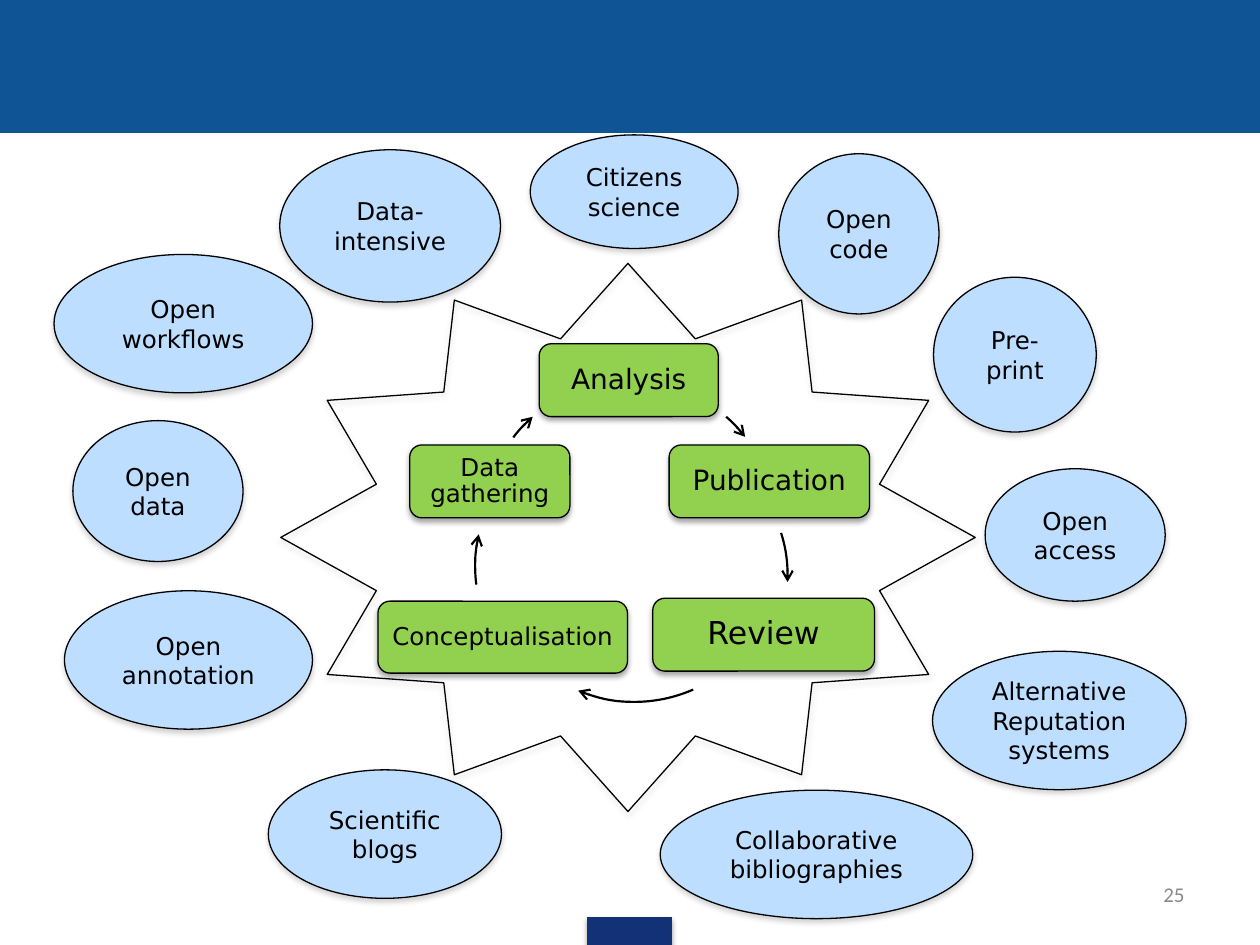
from dataclasses import dataclass

from lxml.etree import SubElement
from pptx import Presentation
from pptx.dml.color import RGBColor
from pptx.enum.shapes import MSO_SHAPE
from pptx.enum.text import MSO_ANCHOR, PP_ALIGN
from pptx.oxml.ns import qn
from pptx.util import Cm, Pt


@dataclass(frozen=True)
class Theme:
    header: str = "0F5494"
    footer: str = "133176"
    step: str = "92D050"
    practice: str = "BDDEFF"
    ink: str = "000000"
    muted: str = "898989"
    dark_shadow: str = "000000"
    soft_shadow: str = "808080"
    font: str = "DejaVu Sans"
    number_font: str = "Calibri"
    small: int = 12
    normal: int = 14
    large: int = 16
    largest: int = 18
    outline: float = 0.75
    arrow: float = 1.25


THEME = Theme()

STEPS = [
    ("Analysis", (10.87, 6.93, 3.61, 1.47), THEME.large),
    ("Publication", (13.49, 8.97, 4.04, 1.47), THEME.large),
    ("Review", (13.16, 12.06, 4.47, 1.47), THEME.largest),
    ("Conceptualisation", (7.62, 12.12, 5.03, 1.45), THEME.normal),
    ("Data gathering", (8.26, 8.97, 3.23, 1.47), THEME.normal),
]

ARC_SIZE = 5.92
ARCS = [
    (9.73, 7.67, 311.2, 322),
    (9.96, 8.66, 342.8, 2.2),
    (9.83, 8.23, 66.4, 112.5),
    (9.58, 8.46, 172.9, 192.6),
    (9.73, 7.67, 217.7, 228.8),
]

PRACTICES = [
    ("Open access", (19.86, 9.45, 3.63, 2.67)),
    ("Scientific blogs", (5.41, 15.52, 4.7, 2.59)),
    ("Collaborative bibliographies", (13.31, 15.93, 6.3, 2.59)),
    ("Alternative Reputation systems", (18.8, 13.13, 5.11, 2.79)),
    ("Citizens science", (10.69, 2.72, 4.19, 2.29)),
    ("Open code", (15.7, 3.1, 3.23, 3.23)),
    ("Open workflows", (1.09, 5.13, 5.21, 2.79)),
    ("Open annotation", (1.3, 11.91, 5, 2.79)),
    ("Open data", (1.47, 8.48, 3.43, 2.84)),
    ("Pre-print", (18.82, 5.59, 3.28, 3.12)),
    ("Data-intensive", (5.64, 3.02, 4.45, 3.07)),
]


def add_shadow(shape, color):
    effects = shape._element.spPr.find(qn("a:effectLst"))
    shadow = SubElement(effects, qn("a:outerShdw"), blurRad=str(Pt(3.1)),
                        dist=str(Pt(1.8)), dir="5400000", rotWithShape="0")
    tint = SubElement(shadow, qn("a:srgbClr"), val=color)
    SubElement(tint, qn("a:alpha"), val="35000")


def add_figure(slide, kind, box, fill=None, line=THEME.ink,
               width=THEME.outline, shadow=None):
    shape = slide.shapes.add_shape(kind, *map(Cm, box))
    shape.shadow.inherit = False
    if fill:
        shape.fill.solid()
        shape.fill.fore_color.rgb = RGBColor.from_string(fill)
    else:
        shape.fill.background()
    shape.line.color.rgb = RGBColor.from_string(line)
    shape.line.width = Pt(width)
    if shadow:
        add_shadow(shape, shadow)
    return shape


def write_text(shape, text, size=THEME.normal, font=THEME.font, color=THEME.ink,
               align=PP_ALIGN.CENTER, anchor=MSO_ANCHOR.MIDDLE, spacing=1.0,
               insets=(0.25, 0.13)):
    frame = shape.text_frame
    frame.word_wrap = True
    frame.vertical_anchor = anchor
    frame.margin_left = frame.margin_right = Cm(insets[0])
    frame.margin_top = frame.margin_bottom = Cm(insets[1])
    paragraph = frame.paragraphs[0]
    paragraph.alignment = align
    paragraph.line_spacing = spacing
    run = paragraph.add_run()
    run.text = text
    run.font.size = Pt(size)
    run.font.name = font
    run.font.color.rgb = RGBColor.from_string(color)


def add_step(slide, text, box, size):
    shape = add_figure(slide, MSO_SHAPE.ROUNDED_RECTANGLE, box, THEME.step,
                       shadow=THEME.dark_shadow)
    write_text(shape, text, size=size, spacing=0.9, insets=(0.18, 0.18))


def add_practice(slide, text, box):
    shape = add_figure(slide, MSO_SHAPE.OVAL, box, THEME.practice,
                       shadow=THEME.soft_shadow)
    write_text(shape, text)


def add_arc_arrow(slide, left, top, start, end):
    arc = add_figure(slide, MSO_SHAPE.ARC, (left, top, ARC_SIZE, ARC_SIZE),
                     width=THEME.arrow)
    for index, degrees in enumerate((start, end)):
        arc.adjustments[index] = degrees * 0.6
    SubElement(arc._element.spPr.find(qn("a:ln")), qn("a:tailEnd"), type="arrow")


def add_slide_number(slide, text):
    box = slide.shapes.add_textbox(Cm(18.21), Cm(17.65), Cm(5.92), Cm(1.02))
    write_text(box, text, size=THEME.small, font=THEME.number_font,
               color=THEME.muted, align=PP_ALIGN.RIGHT, anchor=MSO_ANCHOR.TOP)


def main():
    presentation = Presentation()
    presentation.slide_width = Cm(25.4)
    presentation.slide_height = Cm(19.05)
    slide = presentation.slides.add_slide(presentation.slide_layouts[6])

    add_figure(slide, MSO_SHAPE.RECTANGLE, (0, 0, 25.4, 2.67),
               THEME.header, line=THEME.header)
    add_figure(slide, MSO_SHAPE.RECTANGLE, (11.84, 18.49, 1.7, 0.56),
               THEME.footer, line=THEME.footer, shadow=THEME.dark_shadow)
    for step, arc in zip(STEPS, ARCS):
        add_step(slide, *step)
        add_arc_arrow(slide, *arc)
    add_figure(slide, MSO_SHAPE.STAR_12_POINT, (5.66, 5.31, 14, 11.05),
               shadow=THEME.soft_shadow)
    for practice in PRACTICES:
        add_practice(slide, *practice)
    add_slide_number(slide, "25")

    presentation.save("out.pptx")


if __name__ == "__main__":
    main()
